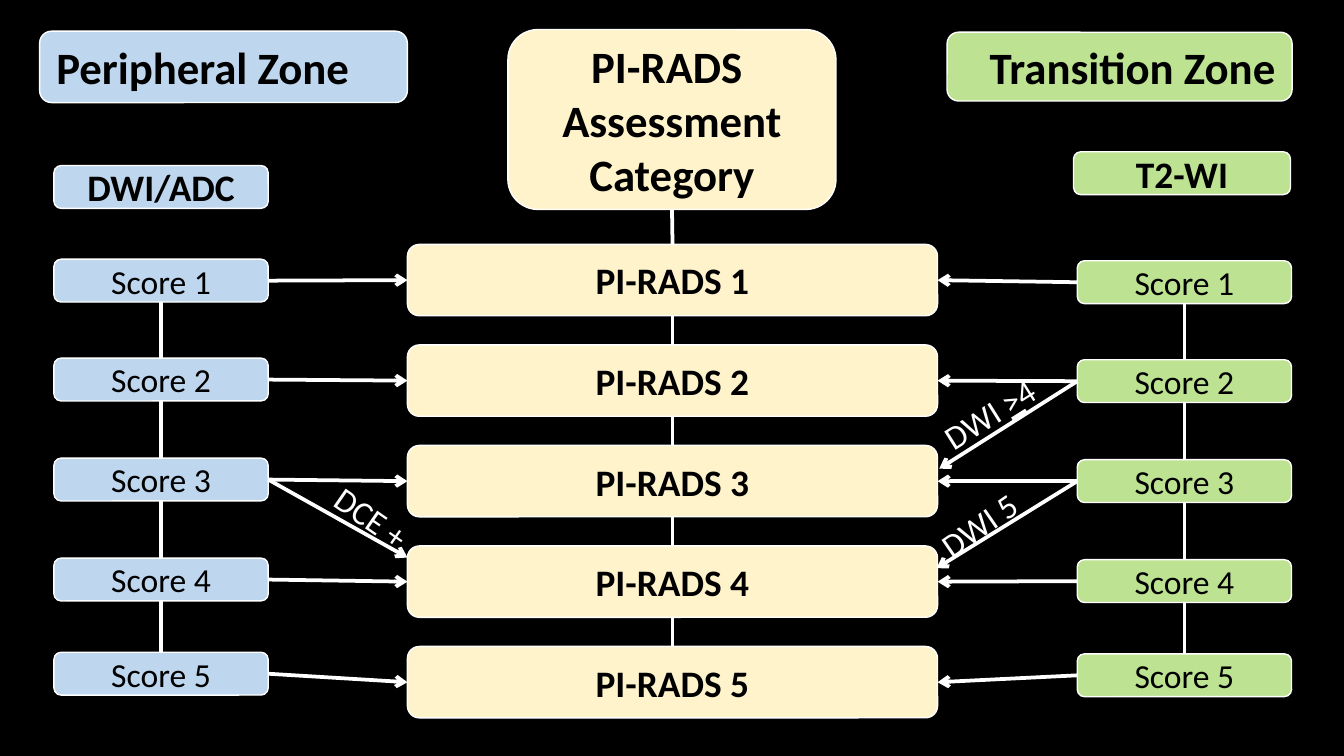
from itertools import pairwise

from lxml.etree import SubElement
from pptx import Presentation
from pptx.dml.color import RGBColor
from pptx.enum.shapes import MSO_CONNECTOR, MSO_SHAPE
from pptx.enum.text import MSO_ANCHOR, PP_ALIGN
from pptx.oxml.ns import qn
from pptx.util import Cm, Pt

BLACK = RGBColor(0x00, 0x00, 0x00)
WHITE = RGBColor(0xFF, 0xFF, 0xFF)
BLUE = RGBColor(0xBE, 0xD7, 0xEF)
GREEN = RGBColor(0xBC, 0xE2, 0x92)
CREAM = RGBColor(0xFF, 0xF3, 0xCC)

TOP, LEFT, BOTTOM, RIGHT = range(4)
SCORE_OFFSETS = (0, 1.87, 3.76, 5.65, 7.43)
CATEGORY_STEP = 1.9


def style_text(sp, size, color, bold=False, align=PP_ALIGN.CENTER):
    """Anchor the text in the middle and format every run."""
    tf = sp.text_frame
    tf.word_wrap = True
    tf.vertical_anchor = MSO_ANCHOR.MIDDLE
    for p in tf.paragraphs:
        p.alignment = align
        for r in p.runs:
            r.font.name = "Calibri"
            r.font.size = Pt(size)
            r.font.bold = bold
            r.font.color.rgb = color


def add_box(s, box, text, fill, size, bold=True, align=PP_ALIGN.CENTER):
    """Add a filled rounded box with black text."""
    sp = s.shapes.add_shape(MSO_SHAPE.ROUNDED_RECTANGLE, *map(Cm, box))
    sp.shadow.inherit = False
    sp.fill.solid()
    sp.fill.fore_color.rgb = fill
    sp.line.color.rgb = WHITE
    sp.line.width = Pt(0.75)
    sp.text_frame.text = text
    style_text(sp, size, BLACK, bold, align)
    return sp


def add_line(s, start, start_side, end=None, end_side=None, point=None, arrow=False):
    """Draw a white line from a box side to another box side or to a point."""
    x, y = map(Cm, point or (0, 0))
    line = s.shapes.add_connector(MSO_CONNECTOR.STRAIGHT, x, y, x, y)
    line.begin_connect(start, start_side)
    if end is not None:
        line.end_connect(end, end_side)
    line.line.color.rgb = WHITE
    line.line.width = Pt(2)
    if arrow:
        SubElement(line.line._get_or_add_ln(), qn("a:tailEnd"), type="arrow")
    SubElement(line._element.spPr, qn("a:effectLst"))


def add_chain(s, boxes):
    """Join each box to the one below it."""
    for upper, lower in pairwise(boxes):
        add_line(s, upper, BOTTOM, lower, TOP)


def add_categories(s, box, title_box):
    """Place the title and the five assessment categories below it."""
    left, top, width, height = box
    title = add_box(s, title_box, "PI-RADS \nAssessment Category", CREAM, 24)
    categories = [
        add_box(s, (left, top + i * CATEGORY_STEP, width, height),
                f"PI-RADS {i + 1}", CREAM, 20)
        for i in range(5)
    ]
    add_chain(s, [title, *categories])
    return categories


def add_scores(s, box, fill, categories, side):
    """Place five scores in a column and point each at its category."""
    left, top, width, height = box
    scores = [
        add_box(s, (left, top + offset, width, height),
                f"Score {i}", fill, 18, bold=False)
        for i, offset in enumerate(SCORE_OFFSETS, 1)
    ]
    add_chain(s, scores)
    for score, category in zip(scores, categories):
        add_line(s, score, side, category, LEFT + RIGHT - side, arrow=True)
    return scores


def add_upgrade(s, score, side, point, label_at, rotation, parts):
    """Draw a slanted arrow with its rotated label; ">" is underlined."""
    add_line(s, score, side, point=point, arrow=True)
    tb = s.shapes.add_textbox(*map(Cm, (*label_at, 2.87, 0.81)))
    tb.rotation = rotation
    p = tb.text_frame.paragraphs[0]
    for part in parts:
        r = p.add_run()
        r.text = part
        r.font.underline = part == ">"
    style_text(tb, 18, WHITE)


def main():
    """Build the assessment slide."""
    prs = Presentation()
    prs.slide_width, prs.slide_height = Cm(25.4), Cm(14.29)
    s = prs.slides.add_slide(prs.slide_layouts[6])
    s.background.fill.solid()
    s.background.fill.fore_color.rgb = BLACK

    categories = add_categories(s, (7.7, 4.62, 10.02, 1.35), (9.6, 0.56, 6.2, 3.4))

    add_box(s, (0.75, 0.59, 6.95, 1.35), "Peripheral Zone", BLUE, 24, align=PP_ALIGN.LEFT)
    add_box(s, (1.02, 3.13, 4.05, 0.81), "DWI/ADC", BLUE, 20)
    left_scores = add_scores(s, (1.02, 4.9, 4.05, 0.81), BLUE, categories, RIGHT)

    add_box(s, (17.9, 0.61, 6.52, 1.3), "Transition Zone", GREEN, 24, align=PP_ALIGN.RIGHT)
    add_box(s, (20.29, 2.87, 4.1, 0.81), "T2-WI", GREEN, 20)
    right_scores = add_scores(s, (20.36, 4.93, 4.05, 0.81), GREEN, categories, LEFT)

    add_upgrade(s, left_scores[2], RIGHT, (7.7, 10.54), (5.59, 9.37), 34.7, ["DCE +"])
    add_upgrade(s, right_scores[1], LEFT, (17.75, 8.86), (17.32, 7.37), 327.8,
                ["DWI ", ">", "4 "])
    add_upgrade(s, right_scores[2], LEFT, (17.7, 10.74), (17.12, 9.47), 325.5, ["DWI 5 "])

    prs.save("out.pptx")


if __name__ == "__main__":
    main()
